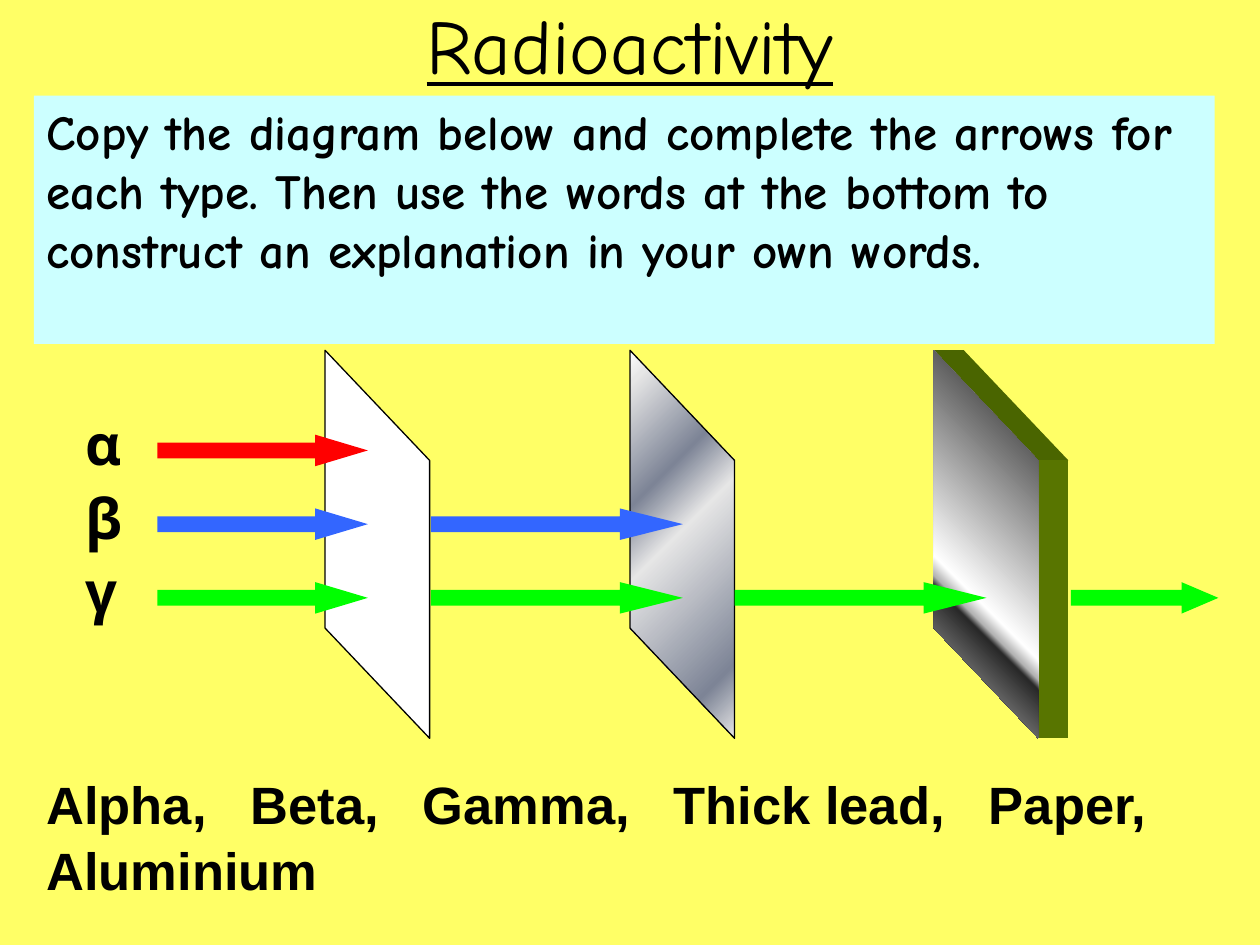
from dataclasses import dataclass

from lxml.etree import SubElement
from pptx import Presentation
from pptx.dml.color import RGBColor
from pptx.enum.shapes import MSO_SHAPE
from pptx.enum.text import MSO_ANCHOR, PP_ALIGN
from pptx.oxml.ns import qn
from pptx.util import Inches, Pt


@dataclass(frozen=True)
class Theme:
    """Colours, fonts and type sizes of the slide."""
    background: str = "FFFF66"
    panel: str = "CCFFFF"
    ink: str = "000000"
    paper: str = "FFFFFF"
    alpha: str = "FF0000"
    beta: str = "3366FF"
    gamma: str = "00FF00"
    lead_top: str = "4A6500"
    lead_side: str = "587500"
    aluminium: tuple = ((0, "FFFFFF"), (7, "E6E6E6"), (32, "7D8496"),
                        (47, "E6E6E6"), (85, "7D8496"), (100, "E6E6E6"))
    lead: tuple = ((0, "CBCBCB"), (13, "5F5F5F"), (21, "5F5F5F"), (63, "FFFFFF"),
                   (67, "B2B2B2"), (69, "292929"), (82, "777777"), (100, "EAEAEA"))
    font: str = "Comic Neue"
    word_font: str = "Arial"
    title_size: int = 44
    label_size: int = 32
    word_size: int = 30
    body_size: int = 28


THEME = Theme()
SHEET_TOP, SHEET_LENGTH, SHEET_WIDTH = 2.78, 3.08, 0.83
SHEET_X = [2.58, 5.0, 7.41]
SHEET_SKEW = 1.054
LEAD_DEPTH = 0.24
ARROW_HEIGHT = 0.25


def paint(sp, color):
    """Give a shape a plain fill with no line or shadow."""
    sp.shadow.inherit = False
    sp.fill.solid()
    sp.fill.fore_color.rgb = RGBColor.from_string(color)
    sp.line.fill.background()


def paint_gradient(sp, stops, turns):
    """Give a shape a diagonal gradient that may turn with the shape."""
    sp.fill.gradient()
    sp.fill.gradient_angle = 315
    grad = sp._element.spPr.find(qn("a:gradFill"))
    grad.set("rotWithShape", "1" if turns else "0")
    stop_list = grad.find(qn("a:gsLst"))
    for old in list(stop_list):
        stop_list.remove(old)
    for position, color in stops:
        stop = SubElement(stop_list, qn("a:gs"), pos=str(position * 1000))
        SubElement(stop, qn("a:srgbClr"), val=color)


def add_run(p, text, size, font=THEME.font, bold=True):
    """Append one formatted run to a paragraph."""
    r = p.add_run()
    r.text = text
    r.font.size = Pt(size)
    r.font.name = font
    r.font.bold = bold
    r.font.color.rgb = RGBColor.from_string(THEME.ink)
    return r


def add_text_box(s, x, y, w, h):
    """Add a wrapping text box and return it with its paragraph."""
    sp = s.shapes.add_textbox(Inches(x), Inches(y), Inches(w), Inches(h))
    tf = sp.text_frame
    tf.word_wrap = True
    return sp, tf.paragraphs[0]


def add_title(s, text):
    """Add the underlined, centred title."""
    sp, p = add_text_box(s, 0.5, -0.11, 9, 0.91)
    sp.text_frame.vertical_anchor = MSO_ANCHOR.MIDDLE
    p.alignment = PP_ALIGN.CENTER
    add_run(p, text, THEME.title_size, bold=False).font.underline = True


def add_instruction(s, text):
    """Add the task text on its pale panel."""
    sp = s.shapes.add_shape(MSO_SHAPE.RECTANGLE, Inches(0.27), Inches(0.76),
                            Inches(9.37), Inches(1.97))
    paint(sp, THEME.panel)
    tf = sp.text_frame
    tf.word_wrap = True
    tf.vertical_anchor = MSO_ANCHOR.TOP
    p = tf.paragraphs[0]
    p.alignment = PP_ALIGN.LEFT
    add_run(p, text, THEME.body_size)


def add_words(s, words, last):
    """Add the word bank with widened spaces between its entries."""
    p = add_text_box(s, 0.27, 6.05, 9.53, 1.1)[1]
    p.line_spacing = 1.05
    for i, word in enumerate(words):
        if i:
            gap = add_run(p, " ", THEME.word_size, THEME.word_font)
            gap.font._element.set("spc", "1670")
        add_run(p, word, THEME.word_size, THEME.word_font)
    add_run(p, " " + last, THEME.word_size, THEME.word_font)


def add_sheet(s, x, color, outlined=True):
    """Add one upright slanted sheet with its left edge at x."""
    left = x + (SHEET_WIDTH - SHEET_LENGTH) / 2
    top = SHEET_TOP + (SHEET_LENGTH - SHEET_WIDTH) / 2
    sp = s.shapes.add_shape(MSO_SHAPE.PARALLELOGRAM, Inches(left), Inches(top),
                            Inches(SHEET_LENGTH), Inches(SHEET_WIDTH))
    sp.rotation = 90
    sp.adjustments[0] = SHEET_SKEW
    paint(sp, color)
    if outlined:
        sp.line.color.rgb = RGBColor.from_string(THEME.ink)
        sp.line.width = Pt(0.75)
    return sp


def add_face(s, points, color):
    """Add a filled polygon through the given points."""
    start, *rest = [(Inches(x), Inches(y)) for x, y in points]
    builder = s.shapes.build_freeform(*start)
    builder.add_line_segments(rest, close=True)
    paint(builder.convert_to_shape(), color)


def add_lead_depth(s, x):
    """Add the top and side faces of the thick lead block."""
    right = x + SHEET_WIDTH
    corner = SHEET_TOP + SHEET_SKEW * SHEET_WIDTH
    bottom = SHEET_TOP + SHEET_LENGTH
    far = right + LEAD_DEPTH
    add_face(s, [(x, SHEET_TOP), (x + LEAD_DEPTH, SHEET_TOP),
                 (far, corner), (right, corner)], THEME.lead_top)
    add_face(s, [(right, corner), (far, corner), (far, bottom), (right, bottom)],
             THEME.lead_side)


def add_arrow(s, x, y, w, color):
    """Add a ray arrow whose head takes a quarter of its length."""
    sp = s.shapes.add_shape(MSO_SHAPE.RIGHT_ARROW, Inches(x), Inches(y),
                            Inches(w), Inches(ARROW_HEIGHT))
    sp.adjustments[1] = w / ARROW_HEIGHT / 4
    paint(sp, color)


def add_ray(s, symbol, y, color, spans):
    """Add a ray's symbol and the arrows for the sheets it reaches."""
    p = add_text_box(s, 0.58, y - 0.25, 0.7, 0.63)[1]
    add_run(p, symbol, THEME.label_size)
    for x, w in spans:
        add_arrow(s, x, y, w, color)


def main():
    """Build and save the slide."""
    prs = Presentation()
    prs.slide_width, prs.slide_height = Inches(10), Inches(7.5)
    s = prs.slides.add_slide(prs.slide_layouts[6])
    s.background.fill.solid()
    s.background.fill.fore_color.rgb = RGBColor.from_string(THEME.background)

    add_title(s, "Radioactivity")
    paper_x, aluminium_x, lead_x = SHEET_X
    paint_gradient(add_sheet(s, aluminium_x, THEME.paper), THEME.aluminium, False)
    add_lead_depth(s, lead_x)
    paint_gradient(add_sheet(s, lead_x, THEME.paper, False), THEME.lead, True)
    add_sheet(s, paper_x, THEME.paper)

    spans = [(1.25, 1.67), (3.42, 2), (5.83, 2), (8.5, 1.17)]
    rays = [("α", THEME.alpha, 1), ("β", THEME.beta, 2), ("γ", THEME.gamma, 4)]
    for i, (symbol, color, reach) in enumerate(rays):
        add_ray(s, symbol, 3.45 + i * 0.585, color, spans[:reach])

    add_instruction(s, "Copy the diagram below and complete the arrows for each type. "
                       "Then use the words at the bottom to construct an explanation "
                       "in your own words.")
    add_words(s, ["Alpha,", "Beta,", "Gamma,", "Thick lead,", "Paper,"], "Aluminium")
    prs.save("out.pptx")


if __name__ == "__main__":
    main()
